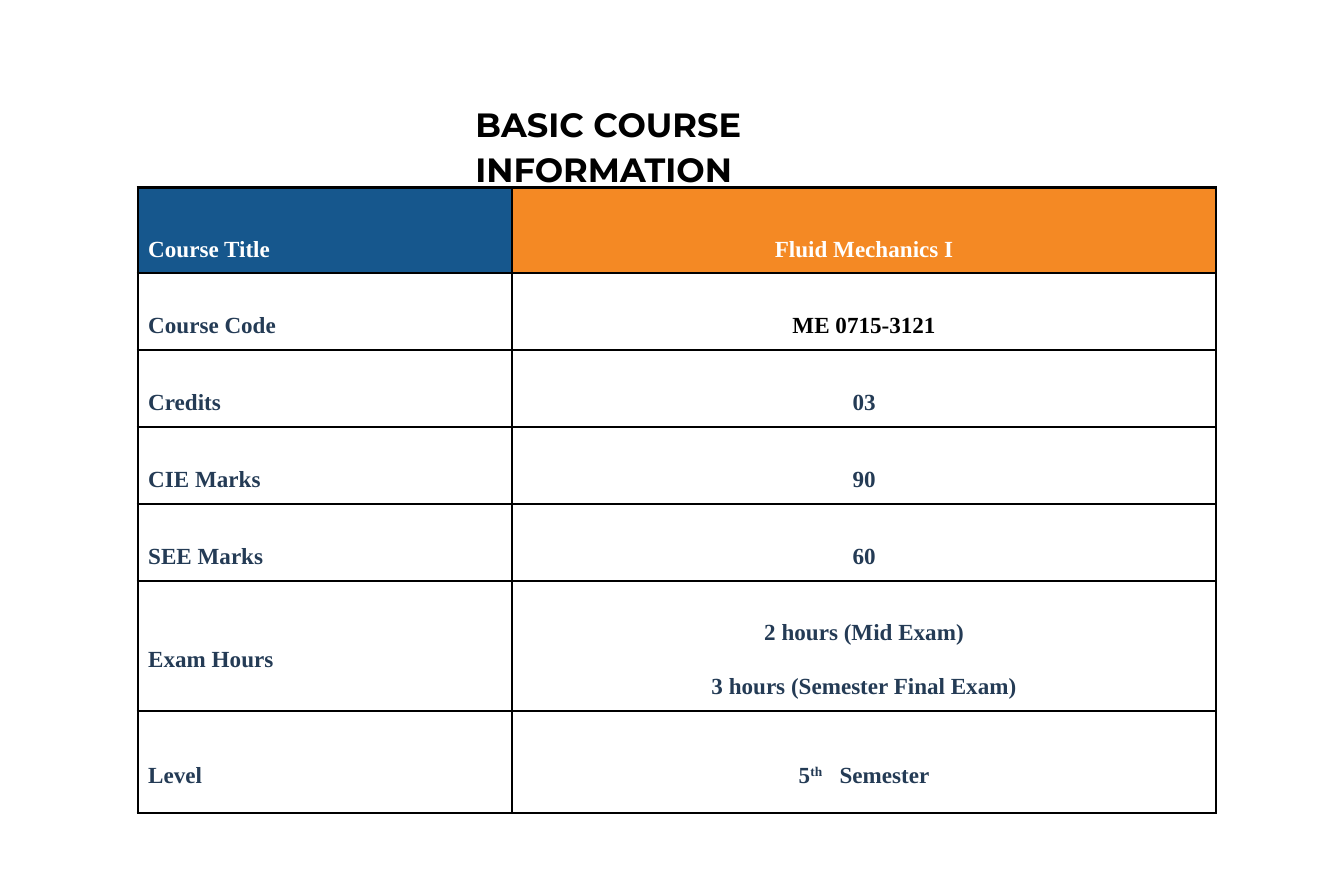
from lxml import etree
from pptx import Presentation
from pptx.dml.color import RGBColor
from pptx.enum.text import MSO_ANCHOR, PP_ALIGN
from pptx.oxml.ns import qn
from pptx.util import Inches, Pt

MIDDLE = MSO_ANCHOR.MIDDLE
LEFT, CENTER = PP_ALIGN.LEFT, PP_ALIGN.CENTER

BLACK = RGBColor(0x00, 0x00, 0x00)
WHITE = RGBColor(0xFF, 0xFF, 0xFF)
BLUE = RGBColor(0x16, 0x57, 0x8D)
ORANGE = RGBColor(0xF4, 0x89, 0x24)
NAVY = RGBColor(0x24, 0x3B, 0x55)

SLIDE_W, SLIDE_H = 11.33, 7.5
COL_WIDTHS = [3.16, 5.93]
ROW_HEIGHTS = [0.71] + [0.65] * 4 + [1.09, 0.86]
CELL_MARGIN = Inches(0.09)

SUPERSCRIPT = {"baseline": "30000"}
WIDE_GAP = {"spc": "700"}

COURSE_ROWS = [
    ("Course Title", [[("Fluid Mechanics I", {})]]),
    ("Course Code", [[("ME 0715-3121", {})]]),
    ("Credits", [[("03", {})]]),
    ("CIE Marks", [[("90", {})]]),
    ("SEE Marks", [[("60", {})]]),
    ("Exam Hours", [[("2 hours (Mid Exam)", {})],
                    [("3 hours (Semester Final Exam)", {})]]),
    ("Level", [[("5", {}), ("th", SUPERSCRIPT), (" ", WIDE_GAP),
                ("Semester", {})]]),
]


def add_run(p, text, font, size, color, attrs):
    r = p.add_run()
    r.text = text
    r.font.name = font
    r.font.size = Pt(size)
    r.font.bold = True
    r.font.color.rgb = color
    for name, value in attrs.items():
        r.font._element.set(name, value)


def add_borders(cell, color, width):
    tc_pr = cell._tc.get_or_add_tcPr()
    for side in ("a:lnL", "a:lnR", "a:lnT", "a:lnB"):
        ln = etree.SubElement(tc_pr, qn(side), w=str(Pt(width)))
        fill = etree.SubElement(ln, qn("a:solidFill"))
        etree.SubElement(fill, qn("a:srgbClr"), val=str(color))


def fill_cell(cell, paragraphs, align, spacing, color, background):
    add_borders(cell, BLACK, 1.5)
    cell.fill.solid()
    cell.fill.fore_color.rgb = background
    cell.vertical_anchor = MIDDLE
    cell.margin_left = cell.margin_right = CELL_MARGIN
    cell.margin_top = cell.margin_bottom = CELL_MARGIN
    tf = cell.text_frame
    for i, runs in enumerate(paragraphs):
        p = tf.add_paragraph() if i else tf.paragraphs[0]
        p.alignment = align
        p.line_spacing = Pt(spacing)
        for text, attrs in runs:
            add_run(p, text, "Times New Roman", 14, color, attrs)


def add_title(s, left, top, width, height):
    box = s.shapes.add_textbox(Inches(left), Inches(top),
                               Inches(width), Inches(height))
    tf = box.text_frame
    tf.word_wrap = True
    p = tf.paragraphs[0]
    p.line_spacing = Pt(27.2)
    add_run(p, "BASIC COURSE INFORMATION", "Montserrat", 20.4, BLACK, {})


def add_course_table(s, left, top):
    frame = s.shapes.add_table(
        len(COURSE_ROWS), len(COL_WIDTHS), Inches(left), Inches(top),
        Inches(sum(COL_WIDTHS)), Inches(sum(ROW_HEIGHTS)))
    table = frame.table
    table.first_row = table.horz_banding = False
    for column, width in zip(table.columns, COL_WIDTHS):
        column.width = Inches(width)
    for i, (label, value) in enumerate(COURSE_ROWS):
        table.rows[i].height = Inches(ROW_HEIGHTS[i])
        header = i == 0
        spacing = 38.8 if header else 32.5
        label_color = WHITE if header else NAVY
        value_color = BLACK if label == "Course Code" else label_color
        fill_cell(table.cell(i, 0), [[(label, {})]], LEFT, spacing,
                  label_color, BLUE if header else WHITE)
        fill_cell(table.cell(i, 1), value, CENTER, spacing,
                  value_color, ORANGE if header else WHITE)


def main():
    prs = Presentation()
    prs.slide_width, prs.slide_height = Inches(SLIDE_W), Inches(SLIDE_H)
    s = prs.slides.add_slide(prs.slide_layouts[6])
    add_title(s, 3.91, 0.79, 3.83, 0.46)
    add_course_table(s, 1.16, 1.58)
    prs.save("out.pptx")


if __name__ == "__main__":
    main()
